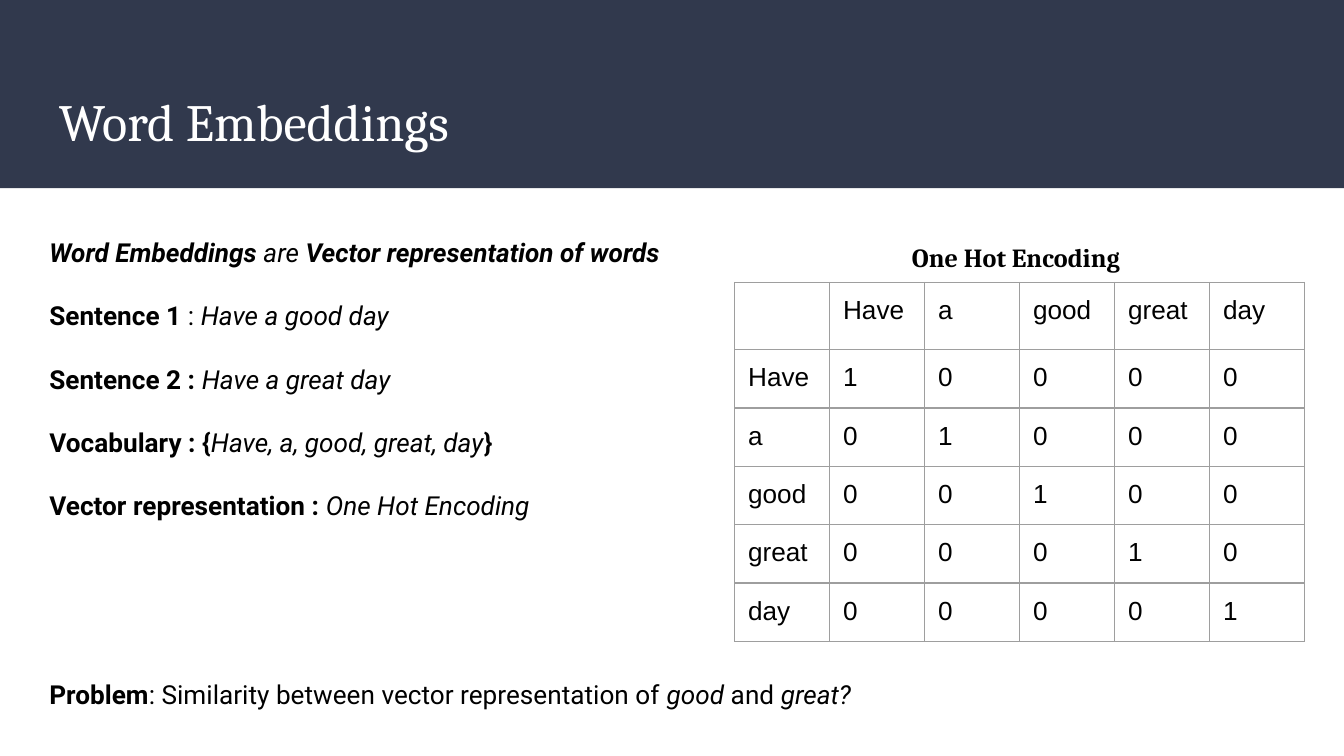
from lxml.etree import SubElement
from pptx import Presentation
from pptx.dml.color import RGBColor
from pptx.enum.shapes import MSO_SHAPE
from pptx.enum.text import MSO_ANCHOR, PP_ALIGN
from pptx.oxml.ns import qn
from pptx.util import Pt

COLORS = {"banner": "31394D", "title": "FFFFFF", "text": "000000", "border": "9E9E9E"}


def add_run(p, text, color="text", **formats):
    r = p.add_run()
    r.text = text
    r.font.color.rgb = RGBColor.from_string(COLORS[color])
    for name, value in formats.items():
        setattr(r.font, name, value)


def add_text(s, left, top, width, height, anchor=MSO_ANCHOR.TOP):
    tf = s.shapes.add_textbox(Pt(left), Pt(top), Pt(width), Pt(height)).text_frame
    formats = {"word_wrap": True, "vertical_anchor": anchor}
    for side in ("left", "top", "right", "bottom"):
        formats[f"margin_{side}"] = Pt(7.2)
    for name, value in formats.items():
        setattr(tf, name, value)
    return tf


prs = Presentation()
prs.slide_width, prs.slide_height = Pt(720), Pt(405)
s = prs.slides.add_slide(prs.slide_layouts[6])

sp = s.shapes.add_shape(MSO_SHAPE.RECTANGLE, 0, 0, Pt(720), Pt(100.8))
sp.shadow.inherit = False
sp.fill.solid()
sp.fill.fore_color.rgb = RGBColor.from_string(COLORS["banner"])
sp.line.fill.background()

tf = add_text(s, 24.5, 39.6, 671, 49, MSO_ANCHOR.BOTTOM)
add_run(tf.paragraphs[0], "Word Embeddings", "title", name="Cambria", size=Pt(28))

lines = [
    (0, [("Word Embeddings", "bi"), (" are ", "i"), ("Vector representation of words", "bi")]),
    (17.1, [("Sentence 1", "b"), (" : ", ""), ("Have a good day", "i")]),
    (17.1, [("Sentence 2 : ", "b"), ("Have a great day", "i")]),
    (17.1, [("Vocabulary : {", "b"), ("Have, a, good, great, day", "i"), ("}", "b")]),
    (17.1, [("Vector representation : ", "b"), ("One Hot Encoding", "i")]),
    (84.3, [("Problem", "b"), (": Similarity between vector representation of ", ""),
            ("good", "i"), (" and ", ""), ("great?", "i")]),
]
tf = add_text(s, 19.4, 119.5, 681, 268)
for i, (gap, runs) in enumerate(lines):
    p = tf.add_paragraph() if i else tf.paragraphs[0]
    p.space_before = Pt(gap)
    for text, style in runs:
        add_run(p, text, name="Roboto", size=Pt(14), bold="b" in style, italic="i" in style)

words = ["Have", "a", "good", "great", "day"]
rows = [[""] + words]
for word in words:
    rows.append([word] + [str(int(word == other)) for other in words])

n = len(rows)
table = s.shapes.add_table(n, n, Pt(393.6), Pt(151.3), Pt(305.4), Pt(185.3)).table
table.first_row = table.horz_banding = False
for i in range(n):
    table.columns[i].width = Pt(50.9)
    table.rows[i].height = Pt(30.1 if i else 34.8)
    for j, text in enumerate(rows[i]):
        cell = table.cell(i, j)
        for side in ("left", "top", "right", "bottom"):
            setattr(cell, f"margin_{side}", Pt(7.2))
        tcPr = cell._tc.get_or_add_tcPr()
        for edge in ("lnL", "lnR", "lnT", "lnB"):
            ln = SubElement(tcPr, qn(f"a:{edge}"), w=str(Pt(0.75)))
            fill = SubElement(ln, qn("a:solidFill"))
            SubElement(fill, qn("a:srgbClr"), val=COLORS["border"])
        cell.fill.background()
        if text:
            add_run(cell.text_frame.paragraphs[0], text, name="Arial", size=Pt(14))

tf = add_text(s, 398.9, 122.4, 290.9, 16.6)
p = tf.paragraphs[0]
p.alignment = PP_ALIGN.CENTER
add_run(p, "One Hot Encoding", name="Cambria", size=Pt(14), bold=True)

prs.save("out.pptx")
